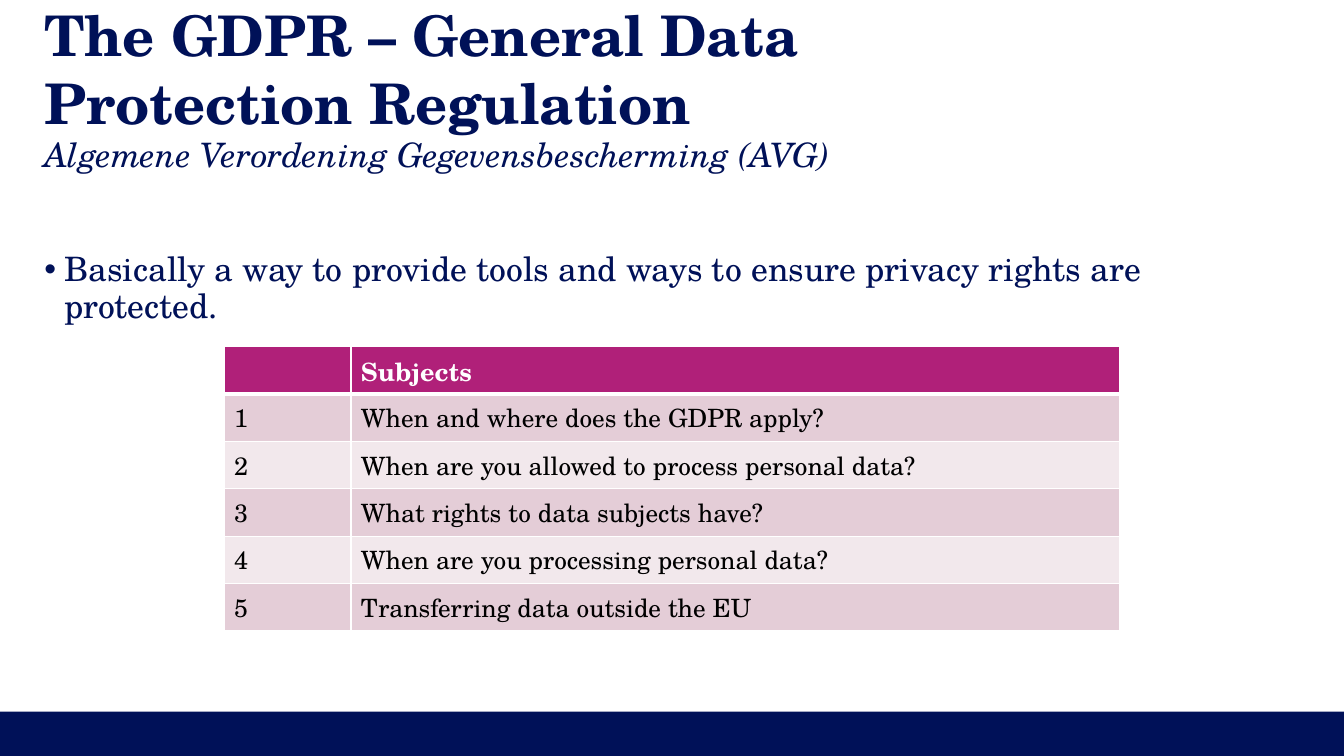
from lxml.etree import SubElement
from pptx import Presentation
from pptx.dml.color import RGBColor
from pptx.enum.shapes import MSO_SHAPE
from pptx.enum.text import MSO_ANCHOR
from pptx.oxml.ns import qn
from pptx.util import Inches, Pt

# Content
TITLE = "The GDPR – General Data Protection Regulation"
SUBTITLE = "Algemene Verordening Gegevensbescherming (AVG)"
BULLET = "Basically a way to provide tools and ways to ensure privacy rights are protected."
HEADER = "Subjects"
SUBJECTS = [
    "When and where does the GDPR apply?",
    "When are you allowed to process personal data?",
    "What rights to data subjects have?",
    "When are you processing personal data?",
    "Transferring data outside the EU",
]

FONT = "TeX Gyre Schola"
NAVY = RGBColor(0x00, 0x11, 0x58)
MAGENTA = RGBColor(0xB0, 0x20, 0x79)
ROSE = RGBColor(0xE4, 0xCD, 0xD7)
PALE = RGBColor(0xF2, 0xE8, 0xEC)
WHITE = RGBColor(0xFF, 0xFF, 0xFF)
BLACK = RGBColor(0x00, 0x00, 0x00)

# Layout in inches
W, H = 13.34, 7.5
FOOTER_H = 0.44
MARGIN = 0.44
TABLE_W = W * 2 / 3
TABLE_X, TABLE_Y = (W - TABLE_W) / 2, 3.44
NUMBER_W, ROW_H = 1.26, 0.47


def style(p, size, color, bold=False, italic=False):
    for r in p.runs:
        f = r.font
        f.name, f.size, f.bold, f.italic = FONT, Pt(size), bold, italic
        f.color.rgb = color


def add_text(slide, x, y, w, h, anchor):
    tf = slide.shapes.add_textbox(Inches(x), Inches(y), Inches(w), Inches(h)).text_frame
    tf.word_wrap = True
    tf.vertical_anchor = anchor
    tf.margin_left = tf.margin_top = tf.margin_right = tf.margin_bottom = 0
    return tf


def set_borders(cell, bottom):
    tcPr = cell._tc.get_or_add_tcPr()
    for i, (side, width) in enumerate([("L", 1), ("R", 1), ("T", 1), ("B", bottom)]):
        ln = tcPr.makeelement(qn(f"a:ln{side}"), {"w": str(Pt(width))})
        fill = SubElement(ln, qn("a:solidFill"))
        SubElement(fill, qn("a:srgbClr"), val=str(WHITE))
        tcPr.insert(i, ln)


prs = Presentation()
prs.slide_width, prs.slide_height = Inches(W), Inches(H)
s = prs.slides.add_slide(prs.slide_layouts[6])

# Footer band
sp = s.shapes.add_shape(MSO_SHAPE.RECTANGLE, 0, Inches(H - FOOTER_H), Inches(W), Inches(FOOTER_H))
sp.shadow.inherit = False
sp.fill.solid()
sp.fill.fore_color.rgb = NAVY
sp.line.fill.background()

# Title
p = add_text(s, MARGIN, 0.44, 10.14, 0.47, MSO_ANCHOR.MIDDLE).paragraphs[0]
p.text = TITLE
style(p, 40, NAVY, bold=True)

# Subtitle and bullet
tf = add_text(s, MARGIN, 1.37, W - 2 * MARGIN, 1.9, MSO_ANCHOR.TOP)
p = tf.paragraphs[0]
p.text = SUBTITLE
p.line_spacing, p.space_after = 0.9, Pt(6)
style(p, 24, NAVY, italic=True)

p = tf.add_paragraph()
p.text = BULLET
p.line_spacing, p.space_before = 0.9, Pt(50)
pPr = p._p.get_or_add_pPr()
pPr.set("marL", str(Inches(0.2)))
pPr.set("indent", str(Inches(-0.2)))
SubElement(pPr, qn("a:buFont"), typeface="Arial")
SubElement(pPr, qn("a:buChar"), char="•")
style(p, 24, NAVY)

# Subjects table
rows = [("", HEADER)] + [(str(n), text) for n, text in enumerate(SUBJECTS, 1)]
table = s.shapes.add_table(len(rows), 2, Inches(TABLE_X), Inches(TABLE_Y),
                           Inches(TABLE_W), Inches(ROW_H * len(rows))).table
table.columns[0].width = Inches(NUMBER_W)
table.columns[1].width = Inches(TABLE_W - NUMBER_W)
for i, row in enumerate(rows):
    head = i == 0
    for j, text in enumerate(row):
        cell = table.cell(i, j)
        cell.text = text
        style(cell.text_frame.paragraphs[0], 18, WHITE if head else BLACK, bold=head)
        cell.fill.solid()
        cell.fill.fore_color.rgb = MAGENTA if head else ROSE if i % 2 else PALE
        set_borders(cell, 3 if head else 1)

prs.save("out.pptx")
